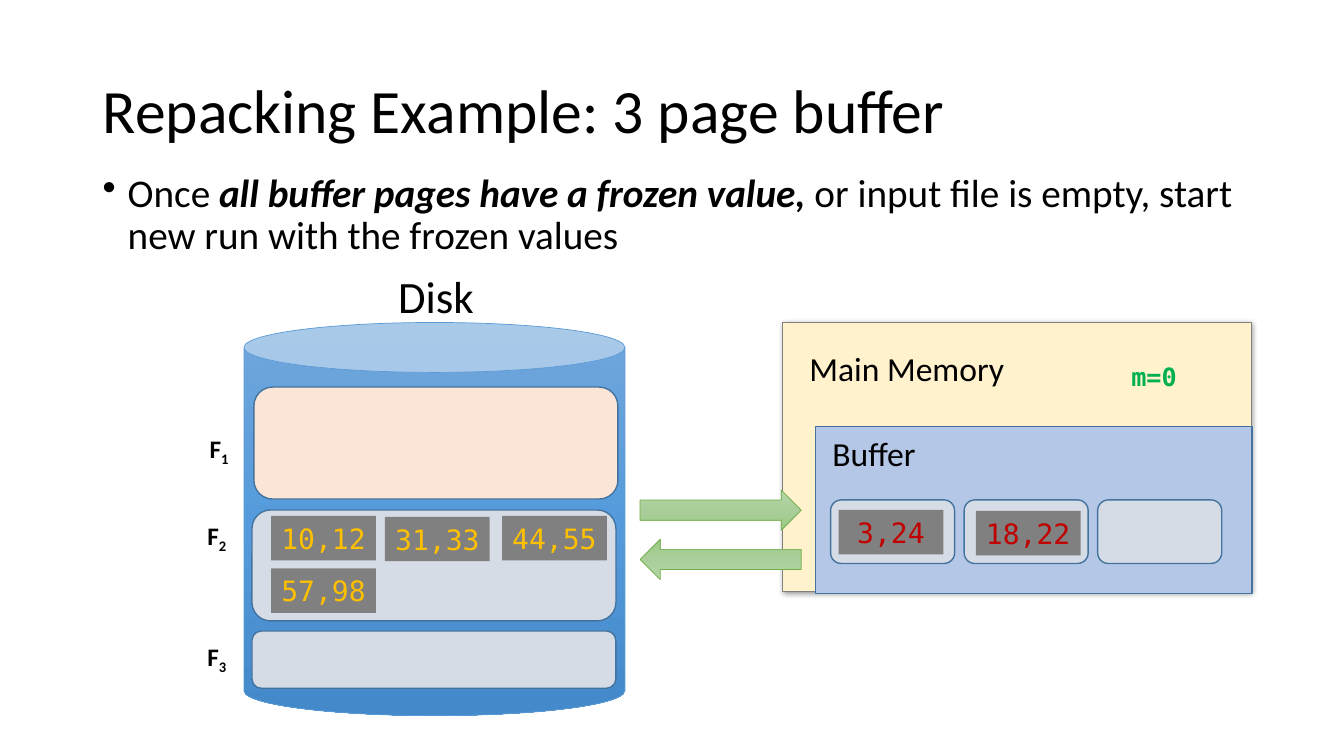
"""Build a slide on repacking runs between disk and a three-page buffer."""
from copy import deepcopy

from lxml import etree
from pptx import Presentation
from pptx.dml.color import RGBColor
from pptx.enum.shapes import MSO_SHAPE
from pptx.enum.text import MSO_ANCHOR, PP_ALIGN
from pptx.oxml import parse_xml
from pptx.oxml.ns import nsdecls, qn
from pptx.util import Pt

CAN, ARROW = MSO_SHAPE.CAN, MSO_SHAPE.RIGHT_ARROW
RECTANGLE, ROUNDED = MSO_SHAPE.RECTANGLE, MSO_SHAPE.ROUNDED_RECTANGLE
LEFT, CENTER = PP_ALIGN.LEFT, PP_ALIGN.CENTER
MIDDLE = MSO_ANCHOR.MIDDLE

SANS, MONO = "Calibri", "DejaVu Sans Mono"
BLACK = RGBColor(0x00, 0x00, 0x00)
GRAY = RGBColor(0x80, 0x80, 0x80)
CREAM = RGBColor(0xFF, 0xF2, 0xCC)
PEACH = RGBColor(0xFB, 0xE5, 0xD6)
PALE = RGBColor(0xD6, 0xDC, 0xE5)
PERIWINKLE = RGBColor(0xB4, 0xC7, 0xE7)
NAVY = RGBColor(0x43, 0x73, 0x9E)
BLUE = RGBColor(0x5B, 0x9B, 0xD5)
LEAF = RGBColor(0x70, 0xAD, 0x47)
GOLD = RGBColor(0xFF, 0xC0, 0x00)
RED = RGBColor(0xC0, 0x00, 0x00)
GREEN = RGBColor(0x00, 0xB0, 0x50)
DISK_BLUES = (RGBColor(0x71, 0xA6, 0xDB), RGBColor(0x55, 0x9B, 0xDB), RGBColor(0x44, 0x8A, 0xCA))
ARROW_GREENS = (RGBColor(0xB5, 0xD5, 0xA7), RGBColor(0xAA, 0xCE, 0x9A), RGBColor(0x9C, 0xC9, 0x87))

TILE_WIDTH, TILE_HEIGHT = 74.9, 31.7


def style_paragraph(paragraph, size, color=BLACK, name=SANS, bold=None, alignment=LEFT):
    """Set the font and alignment of a paragraph."""
    font = paragraph.font
    font.size, font.name, font.bold = Pt(size), name, bold
    font.color.rgb = color
    paragraph.alignment = alignment


def add_text(shapes, box, text, size, wrap=False, **style):
    """Add a text box and return its paragraph."""
    frame = shapes.add_textbox(*map(Pt, box)).text_frame
    frame.word_wrap = wrap
    paragraph = frame.paragraphs[0]
    paragraph.add_run().text = text
    style_paragraph(paragraph, size, **style)
    return paragraph


def add_box(shapes, kind, box, fill=None, line=None, width=1):
    """Add a flat preset shape."""
    shape = shapes.add_shape(kind, *map(Pt, box))
    shape.shadow.inherit = False
    if fill is not None:
        shape.fill.solid()
        shape.fill.fore_color.rgb = fill
    if line is None:
        shape.line.fill.background()
    else:
        shape.line.color.rgb = line
        shape.line.width = Pt(width)
    return shape


def add_gradient(shape, colors):
    """Fill a shape from top to bottom with three colours."""
    shape.fill.gradient()
    shape.fill.gradient_angle = 270
    stops = shape._element.spPr.find(qn("a:gradFill")).find(qn("a:gsLst"))
    stops.insert(1, deepcopy(stops[0]))
    for stop, color, position in zip(shape.fill.gradient_stops, colors, (0, 0.5, 1)):
        stop.color.rgb = color
        stop.position = position


def add_shadow(shape):
    """Give a shape a soft shadow to the lower right."""
    effects = shape._element.spPr.find(qn("a:effectLst"))
    effects.append(parse_xml(
        f'<a:outerShdw {nsdecls("a")} blurRad="50800" dist="12700" dir="2700000" algn="tl" '
        'rotWithShape="0"><a:srgbClr val="000000"><a:alpha val="40000"/></a:srgbClr></a:outerShdw>'))


def add_tile(shapes, left, top, text, color, fill=GRAY, width=TILE_WIDTH,
             height=TILE_HEIGHT, size=20, bold=None):
    """Add a filled tile with values in a monospaced font."""
    shape = add_box(shapes, RECTANGLE, (left, top, width, height), fill)
    frame = shape.text_frame
    frame.word_wrap = False
    frame.vertical_anchor = MIDDLE
    paragraph = frame.paragraphs[0]
    paragraph.add_run().text = text
    style_paragraph(paragraph, size, color, MONO, bold, CENTER)


def add_file_label(shapes, left, top, number):
    """Add a file name with a subscript number."""
    paragraph = add_text(shapes, (left, top, 28.8, 28.8), "F", 18, bold=True)
    run = paragraph.add_run()
    run.text = number
    run._r.get_or_add_rPr().set("baseline", "-25000")


def add_heading(slide):
    """Fill the title and add the bulleted statement."""
    title = slide.shapes.title
    title.left, title.top, title.width, title.height = map(Pt, (66.2, 28.8, 828, 104.4))
    title.text_frame.text = "Repacking Example: 3 page buffer"
    title.text_frame.vertical_anchor = MIDDLE
    heading = title.text_frame.paragraphs[0]
    style_paragraph(heading, 44)
    heading.line_spacing = 0.9

    statement = add_text(slide.shapes, (66.2, 120.2, 828, 72), "Once ", 28, wrap=True)
    emphasis = statement.add_run()
    emphasis.text = "all buffer pages have a frozen value, "
    emphasis.font.bold = emphasis.font.italic = True
    statement.add_run().text = "or input file is empty, start new run with the frozen values"
    statement.line_spacing = 0.9
    statement.space_before = Pt(10)
    properties = statement._p.get_or_add_pPr()
    properties.set("marL", str(Pt(18)))
    properties.set("indent", str(Pt(-18)))
    bullet = etree.Element(qn("a:buChar"), char="•")
    properties.find(qn("a:defRPr")).addprevious(bullet)


def add_disk(shapes):
    """Draw the disk with its three files."""
    disk = add_box(shapes, CAN, (174.2, 230.4, 272.2, 280.8), line=BLUE, width=0.5)
    disk.adjustments[0] = 0.131
    add_gradient(disk, DISK_BLUES)
    add_text(shapes, (276.5, 188.6, 70, 46), "Disk", 32, alignment=CENTER)
    files = (("1", 181.4, 276.5, 80, PEACH, 142.6, 306),
             ("2", 180, 364.3, 79.2, PALE, 141.1, 367.9),
             ("3", 180, 450.7, 41, PALE, 141.1, 454.3))
    for number, left, top, height, fill, label_left, label_top in files:
        add_box(shapes, ROUNDED, (left, top, 260, height), fill, NAVY)
        add_file_label(shapes, label_left, label_top, number)
    for left, top, text in ((193.7, 368.6, "10,12"), (275, 369.2, "31,33"),
                            (358.6, 368.6, "44,55"), (193.7, 406.1, "57,98")):
        add_tile(shapes, left, top, text, GOLD)


def add_memory(shapes):
    """Draw main memory and its buffer pages."""
    group = shapes.add_group_shape().shapes
    memory = add_box(group, RECTANGLE, (558.7, 230.4, 334.8, 192.2), CREAM, GRAY, 0.5)
    add_shadow(memory)
    add_box(group, RECTANGLE, (582.5, 304.6, 311.8, 119.5), PERIWINKLE, NAVY)
    add_text(group, (571, 244.8, 154.8, 36), "Main Memory", 24)
    add_text(group, (587.5, 306, 75, 36), "Buffer", 24)
    for page in range(3):
        add_box(group, ROUNDED, (593.3 + 95.4 * page, 357.1, 88.6, 45.4), PALE, NAVY)
    add_tile(shapes, 599, 364.3, "3,24", RED)
    add_tile(shapes, 697, 365, "18,22", RED)
    add_tile(shapes, 800.6, 254.2, "m=0", GREEN, CREAM, 47.5, 28.8, 18, True)


def add_transfers(shapes):
    """Draw the arrows to and from memory."""
    for top, rotation in ((350, 0), (385.2, 180)):
        arrow = add_box(shapes, ARROW, (457.2, top, 115.2, 28.8), line=LEAF, width=0.5)
        add_gradient(arrow, ARROW_GREENS)
        arrow.rotation = rotation


def main():
    """Build and save the presentation."""
    presentation = Presentation()
    presentation.slide_width, presentation.slide_height = Pt(960), Pt(540)
    slide = presentation.slides.add_slide(presentation.slide_layouts[5])
    add_heading(slide)
    add_disk(slide.shapes)
    add_memory(slide.shapes)
    add_transfers(slide.shapes)
    presentation.save("out.pptx")


if __name__ == "__main__":
    main()
